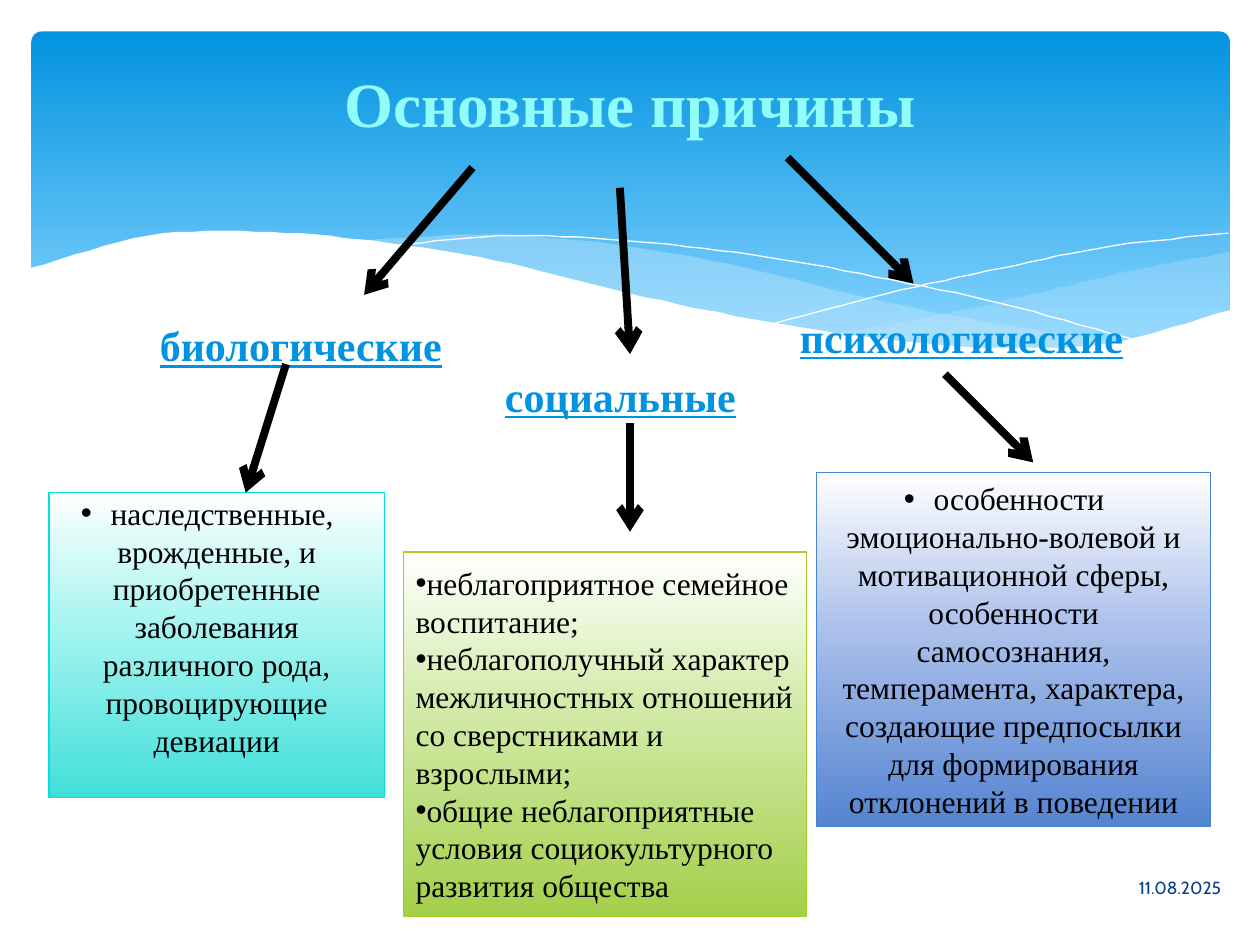
from dataclasses import dataclass
from typing import Optional

from lxml.etree import SubElement
from pptx import Presentation
from pptx.dml.color import RGBColor
from pptx.enum.shapes import MSO_CONNECTOR, MSO_SHAPE
from pptx.enum.text import MSO_ANCHOR, PP_ALIGN
from pptx.oxml.ns import qn
from pptx.util import Pt

EMU_PER_PX = 9144
CURVE_STEPS = 8


@dataclass(frozen=True)
class Theme:
    font: str = "Times New Roman"
    date_font: str = "Cabin"
    title_color: str = "91FDFA"
    label_color: str = "0293E0"
    date_color: str = "073E87"
    black: str = "000000"
    white: str = "FFFFFF"
    haze: str = "C6E7FC"
    banner: tuple = ((0, "0293E0"), (90, "83D3FE"))
    title_size: int = 36
    label_size: int = 24
    body_size: int = 18
    date_size: int = 10
    arrow_width: float = 4.5
    border_width: float = 0.75


THEME = Theme()


@dataclass(frozen=True)
class Area:
    left: int
    top: int
    width: int
    height: int

    def emu(self) -> tuple:
        return tuple(px(v) for v in (self.left, self.top, self.width, self.height))


@dataclass(frozen=True)
class Style:
    size: int
    color: str
    font: str = THEME.font
    bold: bool = False
    underline: bool = False


@dataclass(frozen=True)
class Wave:
    left: int
    right: int
    upper: tuple
    lower: tuple = ()
    fill: Optional[str] = None
    opacity: int = 100


@dataclass(frozen=True)
class Label:
    text: str
    area: Area
    style: Style
    alignment: PP_ALIGN = PP_ALIGN.LEFT
    anchor: MSO_ANCHOR = MSO_ANCHOR.TOP


@dataclass(frozen=True)
class Card:
    area: Area
    middle: str
    end: str
    border: str
    items: tuple
    alignment: PP_ALIGN = PP_ALIGN.CENTER
    anchor: MSO_ANCHOR = MSO_ANCHOR.MIDDLE
    top_margin: int = 5


TITLE = Style(THEME.title_size, THEME.title_color, bold=True)
CAUSE = Style(THEME.label_size, THEME.label_color, bold=True, underline=True)
BODY = Style(THEME.body_size, THEME.black)
DATE = Style(THEME.date_size, THEME.date_color, THEME.date_font)

WAVES = (
    Wave(661, 976, (265, 251, 234, 215, 200), (265, 274, 277, 272, 247),
         THEME.haze, 29),
    Wave(286, 893, (191, 186, 194, 212, 237, 257, 273),
         (191, 208, 231, 253, 269, 277, 273), THEME.haze, 40),
    Wave(309, 907, (195, 187, 192, 204, 222, 244, 272)),
    Wave(613, 975, (257, 233, 213, 195, 185)),
    Wave(23, 977, (213, 187, 184, 193, 209, 233, 253, 268, 276, 272, 246),
         (329, 329), THEME.white),
)

LABELS = (
    Label("Основные причины", Area(50, 37, 900, 88), TITLE,
          PP_ALIGN.CENTER, MSO_ANCHOR.MIDDLE),
    Label("11.08.2025", Area(565, 684, 414, 40), DATE,
          PP_ALIGN.RIGHT, MSO_ANCHOR.MIDDLE),
    Label("биологические", Area(117, 249, 273, 50), CAUSE),
    Label("социальные", Area(391, 289, 227, 50), CAUSE),
    Label("психологические", Area(625, 242, 307, 50), CAUSE),
)

CARDS = (
    Card(Area(39, 391, 266, 242), "A5F4F0", "42DFD9", "05E0DB",
         ("наследственные, врожденные, и приобретенные заболевания различного рода, "
          "провоцирующие девиации",), anchor=MSO_ANCHOR.TOP, top_margin=1),
    Card(Area(320, 438, 320, 289), "D1EAA7", "A4CF4A", "A5D028",
         ("неблагоприятное семейное воспитание;",
          "неблагополучный характер межличностных отношений со сверстниками и взрослыми;",
          "общие неблагоприятные условия социокультурного развития общества"),
         PP_ALIGN.LEFT),
    Card(Area(648, 375, 313, 281), "ABC0EB", "5484D1", "4584D3",
         ("особенности эмоционально-волевой и мотивационной сферы, особенности "
          "самосознания, темперамента, характера, создающие предпосылки для "
          "формирования отклонений в поведении",)),
)

ARROWS = (
    ((625, 125), (725, 225)),
    ((492, 149), (500, 281)),
    ((375, 133), (289, 234)),
    ((500, 336), (500, 422)),
    ((750, 297), (820, 367)),
    ((227, 289), (195, 391)),
)


def px(value: int) -> int:
    return value * EMU_PER_PX


def rgb(color: str) -> RGBColor:
    return RGBColor.from_string(color)


def curve(left: int, right: int, heights: tuple) -> list:
    spans = len(heights) - 1
    padded = (2 * heights[0] - heights[1], *heights, 2 * heights[-1] - heights[-2])
    points = []
    for step in range(spans * CURVE_STEPS + 1):
        span = min(step // CURVE_STEPS, spans - 1)
        t = step / CURVE_STEPS - span
        a, b, c, d = padded[span:span + 4]
        y = b + t / 2 * (c - a + t * (2 * a - 5 * b + 4 * c - d
                                      + t * (3 * b - a - 3 * c + d)))
        points.append((left + (right - left) * step / (spans * CURVE_STEPS), y))
    return points


def fill_gradient(shape, stops: tuple) -> None:
    shape.fill.gradient()
    shape.fill.gradient_angle = 270
    stop_list = shape._element.spPr.find(qn("a:gradFill")).find(qn("a:gsLst"))
    for stop in list(stop_list):
        stop_list.remove(stop)
    for percent, color in stops:
        stop = SubElement(stop_list, qn("a:gs"), pos=str(percent * 1000))
        SubElement(stop, qn("a:srgbClr"), val=color)


def write(paragraph, text: str, style: Style, alignment: PP_ALIGN) -> None:
    paragraph.alignment = alignment
    run = paragraph.add_run()
    run.text = text
    run.font.name = style.font
    run.font.size = Pt(style.size)
    run.font.bold = style.bold
    run.font.underline = style.underline
    run.font.color.rgb = rgb(style.color)


def draw_banner(slide) -> None:
    shape = slide.shapes.add_shape(MSO_SHAPE.ROUNDED_RECTANGLE,
                                   *Area(25, 25, 951, 270).emu())
    shape.adjustments[0] = 0.03
    shape.shadow.inherit = False
    shape.line.fill.background()
    fill_gradient(shape, THEME.banner)


def draw_wave(slide, wave: Wave) -> None:
    points = curve(wave.left, wave.right, wave.upper)
    if wave.lower:
        points += reversed(curve(wave.left, wave.right, wave.lower))
    builder = slide.shapes.build_freeform(*points[0], scale=EMU_PER_PX)
    builder.add_line_segments(points[1:], close=bool(wave.lower))
    shape = builder.convert_to_shape()
    shape.shadow.inherit = False
    if wave.fill is None:
        shape.fill.background()
        shape.line.color.rgb = rgb(THEME.white)
        shape.line.width = Pt(0)
        return
    shape.line.fill.background()
    shape.fill.solid()
    shape.fill.fore_color.rgb = rgb(wave.fill)
    if wave.opacity < 100:
        color = shape._element.spPr.find(qn("a:solidFill")).find(qn("a:srgbClr"))
        SubElement(color, qn("a:alpha"), val=str(wave.opacity * 1000))


def draw_label(slide, label: Label) -> None:
    frame = slide.shapes.add_textbox(*label.area.emu()).text_frame
    frame.word_wrap = True
    frame.vertical_anchor = label.anchor
    write(frame.paragraphs[0], label.text, label.style, label.alignment)


def draw_card(slide, card: Card) -> None:
    shape = slide.shapes.add_shape(MSO_SHAPE.RECTANGLE, *card.area.emu())
    shape.shadow.inherit = False
    shape.line.color.rgb = rgb(card.border)
    shape.line.width = Pt(THEME.border_width)
    fill_gradient(shape, ((0, THEME.white), (44, card.middle), (100, card.end)))
    frame = shape.text_frame
    frame.word_wrap = True
    frame.vertical_anchor = card.anchor
    frame.margin_top = px(card.top_margin)
    for index, item in enumerate(card.items):
        paragraph = frame.add_paragraph() if index else frame.paragraphs[0]
        write(paragraph, item, BODY, card.alignment)
        properties = paragraph._p.get_or_add_pPr()
        SubElement(properties, qn("a:buFont"), typeface="Arial")
        SubElement(properties, qn("a:buChar"), char="•")


def draw_arrow(slide, start: tuple, end: tuple) -> None:
    connector = slide.shapes.add_connector(
        MSO_CONNECTOR.STRAIGHT, *(px(value) for value in start + end))
    connector.line.color.rgb = rgb(THEME.black)
    connector.line.width = Pt(THEME.arrow_width)
    SubElement(connector.line._get_or_add_ln(), qn("a:tailEnd"), type="arrow")
    SubElement(connector._element.spPr, qn("a:effectLst"))


def main() -> None:
    presentation = Presentation()
    presentation.slide_width = px(1000)
    presentation.slide_height = px(750)
    slide = presentation.slides.add_slide(presentation.slide_layouts[6])
    draw_banner(slide)
    for wave in WAVES:
        draw_wave(slide, wave)
    for label in LABELS:
        draw_label(slide, label)
    for card in CARDS:
        draw_card(slide, card)
    for start, end in ARROWS:
        draw_arrow(slide, start, end)
    presentation.save("out.pptx")


if __name__ == "__main__":
    main()
